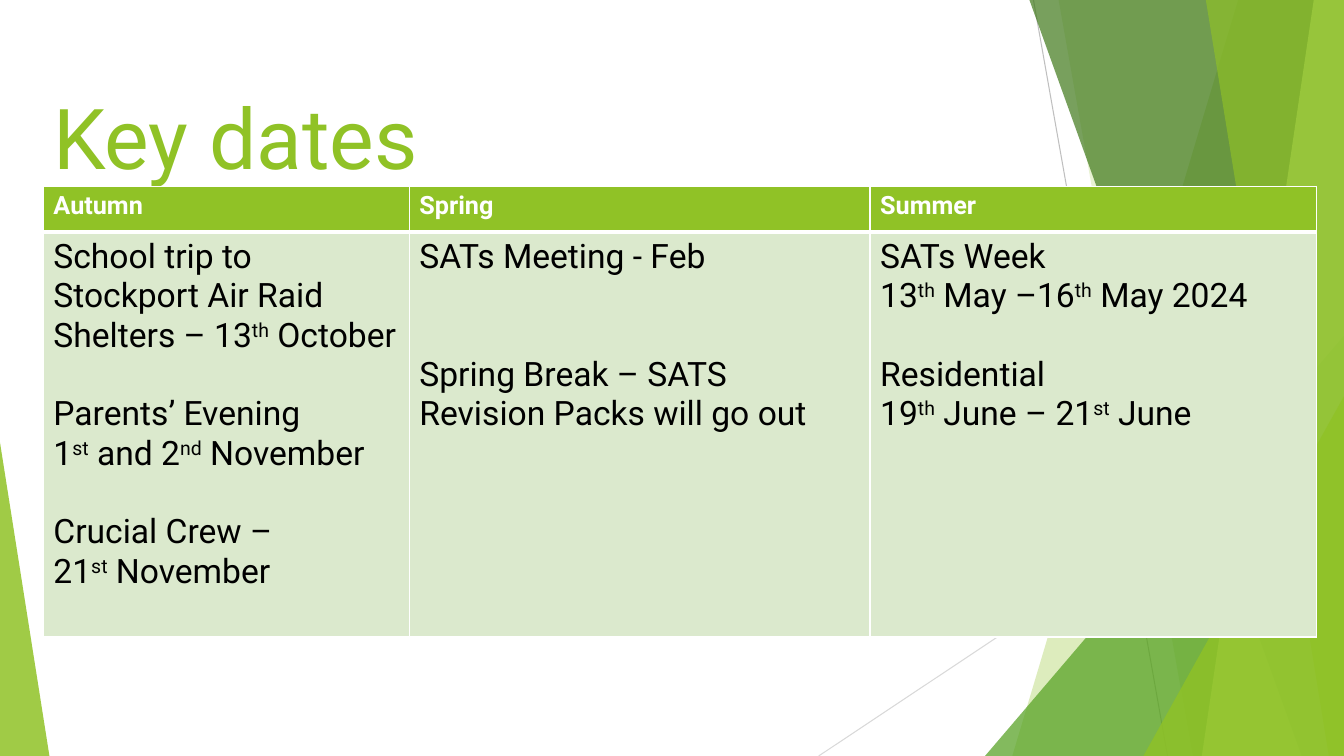
"""Build the "Key dates" slide: a term table on a faceted green backdrop."""
from lxml.etree import SubElement
from pptx import Presentation
from pptx.dml.color import RGBColor
from pptx.enum.shapes import MSO_CONNECTOR, MSO_SHAPE
from pptx.enum.text import MSO_ANCHOR, MSO_AUTO_SIZE
from pptx.oxml.ns import qn
from pptx.util import Pt

PX = 9144
WIDE, HIGH = 1333, 750
HUES = {"lime": "90C226", "leaf": "54A021", "moss": "3F7819", "pale": "C0E474",
        "mint": "DBE9CD", "white": "FFFFFF", "black": "000000",
        "gray": "BFBFBF", "mist": "D9D9D9"}


def write(frame, lines, size, hue, bold=False):
    """Write (space before, text) lines; parts between carets are raised."""
    frame.word_wrap = True
    for row, (gap, text) in enumerate(lines):
        para = frame.paragraphs[0] if row == 0 else frame.add_paragraph()
        para.space_before = Pt(gap)
        for part, words in enumerate(text.split("^")):
            if not words:
                continue
            run = para.add_run()
            run.text = words
            run.font.name = "Roboto"
            run.font.size = Pt(size)
            run.font.bold = bold
            run.font.color.rgb = RGBColor.from_string(HUES[hue])
            if part % 2:
                run.font._element.set("baseline", "30000")


def paint(shape, hue, alpha):
    """Fill a shape with a see-through colour and no outline."""
    shape.shadow.inherit = False
    shape.line.fill.background()
    shape.fill.solid()
    shape.fill.fore_color.rgb = RGBColor.from_string(HUES[hue])
    clr = shape._element.spPr.find(".//" + qn("a:srgbClr"))
    SubElement(clr, qn("a:alpha"), val=str(alpha * 1000))


deck = Presentation()
deck.slide_width, deck.slide_height = WIDE * PX, HIGH * PX
slide = deck.slides.add_slide(deck.slide_layouts[6])
shapes = slide.shapes

for x1, y1, x2, y2, hue in [(1025, 0, 1158, HIGH, "gray"),
                            (WIDE, 403, 812, HIGH, "mist")]:
    line = shapes.add_connector(MSO_CONNECTOR.STRAIGHT,
                                x1 * PX, y1 * PX, x2 * PX, y2 * PX)
    line.line.width = Pt(0.75)
    line.line.color.rgb = RGBColor.from_string(HUES[hue])
    SubElement(line._element.spPr, qn("a:effectLst"))

facets = [
    ("pane", (1228, 1004), "lime", 30),
    ("pane", (1050, 1183), "lime", 20),
    ("peak", (977, 333, 356, 1), "leaf", 72),
    ("pane", (1021, 1291), "moss", 70),
    ("pane", (1303, 1192), "pale", 70),
    ("pane", (1196, 1318), "lime", 65),
    ("peak", (1134, 393, 199, 1), "lime", 80),
    ("peak", (0, 439, 49, 0), "lime", 85),
]
for kind, place, hue, alpha in facets:
    if kind == "pane":
        head, foot = place
        path = shapes.build_freeform(head, 0, scale=PX)
        path.add_line_segments([(WIDE, 0), (WIDE, HIGH), (foot, HIGH)])
        facet = path.convert_to_shape()
    else:
        left, top, width, apex = place
        facet = shapes.add_shape(MSO_SHAPE.ISOSCELES_TRIANGLE, left * PX, top * PX,
                                 width * PX, (HIGH - top) * PX)
        facet.adjustments[0] = apex
    paint(facet, hue, alpha)

title = shapes.add_textbox(43 * PX, 73 * PX, 570 * PX, 77 * PX).text_frame
title.auto_size = MSO_AUTO_SIZE.NONE
title.vertical_anchor = MSO_ANCHOR.TOP
title.margin_top = 12 * PX
write(title, [(0, "Key dates")], 60, "lime")

GAP = 28
terms = [
    ("Autumn", 363, [
        (0, "School trip to Stockport Air Raid Shelters – 13^th^ October"),
        (GAP, "Parents’ Evening"),
        (0, "1^st^ and 2^nd^ November"),
        (GAP, "Crucial Crew –"),
        (0, "21^st^ November")]),
    ("Spring", 457, [
        (0, "SATs Meeting - Feb"),
        (2 * GAP, "Spring Break – SATS Revision Packs will go out")]),
    ("Summer", 443, [
        (0, "SATs Week"),
        (0, "13^th^ May –16^th^ May 2024"),
        (GAP, "Residential"),
        (0, "19^th^ June – 21^st^ June")]),
]
rows = [45, 402]
table = shapes.add_table(2, 3, 43 * PX, 185 * PX, 1263 * PX, sum(rows) * PX).table
table.horz_banding = False
for row, height in zip(table.rows, rows):
    row.height = height * PX
for col, (term, width, dates) in enumerate(terms):
    table.columns[col].width = width * PX
    head, body = table.cell(0, col), table.cell(1, col)
    write(head.text_frame, [(0, term)], 18, "white", bold=True)
    write(body.text_frame, dates, 24, "black")
    for cell, hue, base in [(head, "lime", 3), (body, "mint", 1)]:
        props = cell._tc.get_or_add_tcPr()
        for side, thick in [("L", 1), ("R", 1), ("T", 4 - base), ("B", base)]:
            edge = SubElement(props, qn("a:ln" + side), w=str(Pt(thick)))
            if cell is head and side == "T":
                edge.set("w", str(Pt(1)))
            fill = SubElement(edge, qn("a:solidFill"))
            SubElement(fill, qn("a:srgbClr"), val=HUES["white"])
        cell.fill.solid()
        cell.fill.fore_color.rgb = RGBColor.from_string(HUES[hue])

deck.save("out.pptx")
